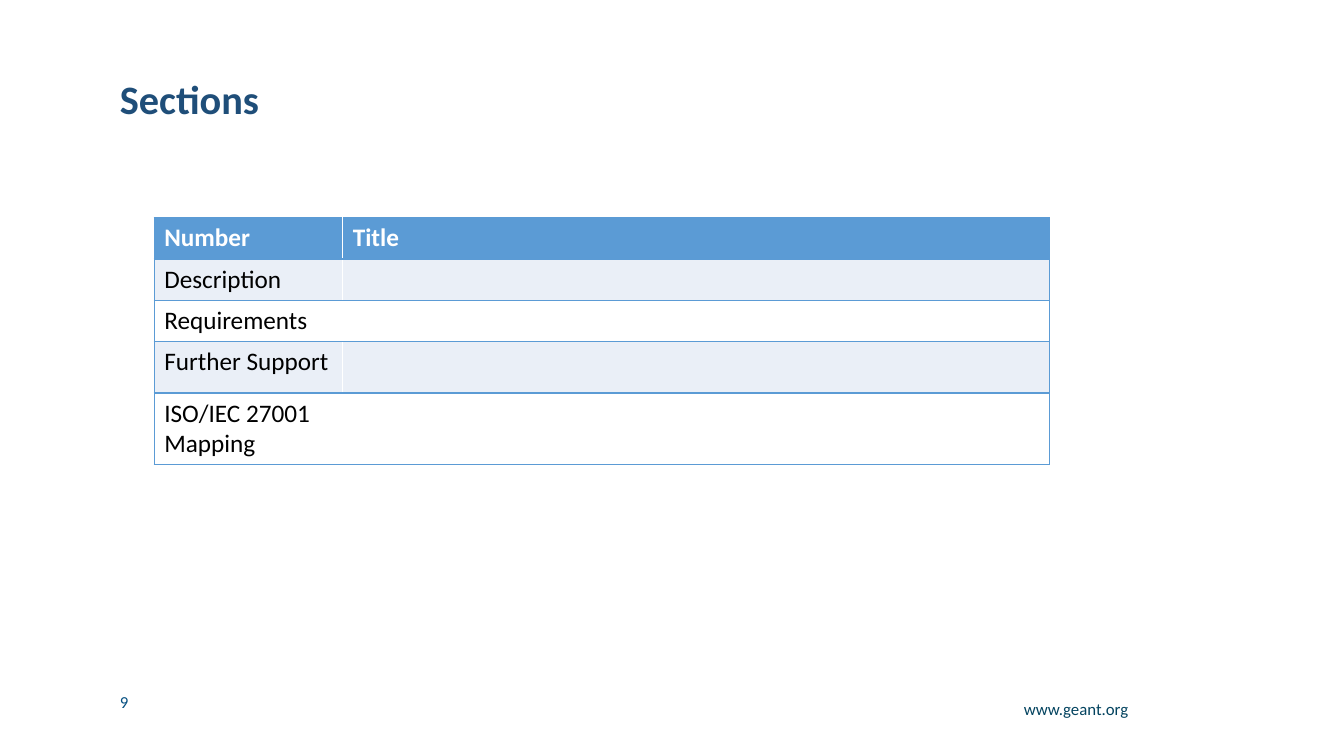
from lxml import etree
from pptx import Presentation
from pptx.dml.color import RGBColor
from pptx.enum import text
from pptx.oxml import ns
from pptx.util import Inches, Pt

WHITE = RGBColor(0xFF, 0xFF, 0xFF)
BLACK = RGBColor(0x00, 0x00, 0x00)
BLUE = RGBColor(0x5B, 0x9B, 0xD5)
PALE = RGBColor(0xEA, 0xEF, 0xF7)
NAVY = RGBColor(0x1F, 0x4E, 0x79)
NUMBER_BLUE = RGBColor(0x06, 0x50, 0x81)
FOOTER_BLUE = RGBColor(0x03, 0x43, 0x5F)


def write(tf, content, size=18, color=BLACK, bold=False, align=None, spacing=None):
    tf.word_wrap = True
    p = tf.paragraphs[0]
    p.alignment = align
    p.line_spacing = spacing
    r = p.add_run()
    r.text = content
    r.font.name = "Calibri"
    r.font.size = Pt(size)
    r.font.bold = bold
    r.font.color.rgb = color


def add_border(cell, sides):
    tcPr = cell._tc.get_or_add_tcPr()
    for i, side in enumerate(sides):
        ln = etree.Element(ns.qn(f"a:ln{side}"), w=str(Pt(1)))
        fill = etree.SubElement(ln, ns.qn("a:solidFill"))
        etree.SubElement(fill, ns.qn("a:srgbClr"), val=str(BLUE))
        tcPr.insert(i, ln)  # borders come before the fill


prs = Presentation()
prs.slide_width = Inches(13.33)
prs.slide_height = Inches(7.5)
s = prs.slides.add_slide(prs.slide_layouts[6])

# Page number, web address and title
labels = [
    ("9", (1.09, 6.81, 1.45, 0.3), dict(size=12, color=NUMBER_BLUE)),
    ("www.geant.org", (9.61, 6.91, 1.68, 0.37),
     dict(size=12, color=FOOTER_BLUE, align=text.PP_ALIGN.RIGHT, spacing=0.9)),
    ("Sections", (1.09, 0.77, 10.82, 0.47),
     dict(size=28.8, color=NAVY, bold=True, spacing=0.9)),
]
for content, box, style in labels:
    sp = s.shapes.add_textbox(*[Inches(v) for v in box])
    write(sp.text_frame, content, **style)
sp.text_frame.vertical_anchor = text.MSO_ANCHOR.MIDDLE

# Sections table
rows = [
    ("Number", "Title"),
    ("Description", ""),
    ("Requirements", ""),
    ("Further Support", ""),
    ("ISO/IEC 27001 Mapping", ""),
]
heights = [0.41, 0.41, 0.41, 0.51, 0.71]
widths = [1.87, 7.01]
table = s.shapes.add_table(len(rows), len(widths), Inches(1.53), Inches(2.16),
                           Inches(sum(widths)), Inches(sum(heights))).table
for column, width in zip(table.columns, widths):
    column.width = Inches(width)
for i, (row, height) in enumerate(zip(rows, heights)):
    table.rows[i].height = Inches(height)
    header = i == 0
    for j, content in enumerate(row):
        cell = table.cell(i, j)
        cell.fill.solid()
        cell.fill.fore_color.rgb = BLUE if header else PALE if i % 2 else WHITE
        add_border(cell, "RTB" if j else "LTB")
        if content:
            write(cell.text_frame, content, color=WHITE if header else BLACK, bold=header)

prs.save("out.pptx")
